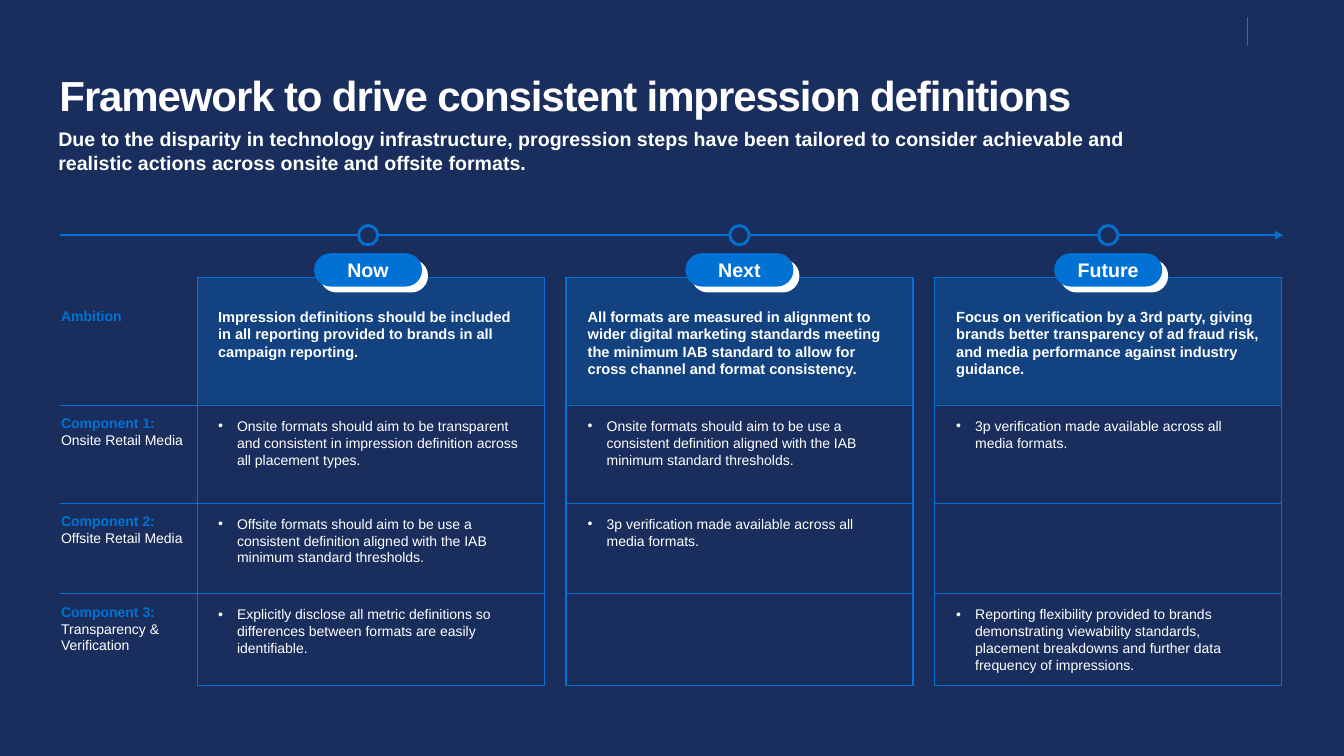
from dataclasses import dataclass

from lxml import etree
from pptx import Presentation
from pptx.dml.color import RGBColor
from pptx.enum import shapes, text
from pptx.oxml import ns
from pptx.util import Pt


@dataclass(frozen=True)
class Theme:
    font: str = "Arial"
    navy: str = "1A2E5D"
    blue: str = "0172D4"
    white: str = "FFFFFF"
    grey: str = "5B5F82"
    title: float = 30
    heading: float = 14
    ambition: float = 10.5
    body: float = 10


def add_xml(parent, tag, **attributes):
    return etree.SubElement(parent, ns.qn(tag), attributes)


class SlideBuilder:
    def __init__(self, slide, theme):
        self.slide = slide
        self.theme = theme
        slide.background.fill.solid()
        slide.background.fill.fore_color.rgb = RGBColor.from_string(theme.navy)

    def set_text(self, shape, lines, size, bold=False, color=None, align=text.PP_ALIGN.LEFT,
                 insets=(7.2, 3.6, 7.2, 3.6), anchor=text.MSO_ANCHOR.TOP, bullet=False):
        """Fill a shape with lines, each a string or a (string, bold, color) tuple."""
        frame = shape.text_frame
        frame.word_wrap = True
        frame.auto_size = text.MSO_AUTO_SIZE.NONE
        frame.vertical_anchor = anchor
        (frame.margin_left, frame.margin_top,
         frame.margin_right, frame.margin_bottom) = map(Pt, insets)
        for index, line in enumerate(lines):
            words, is_bold, ink = (line, bold, color) if isinstance(line, str) else line
            paragraph = frame.paragraphs[0] if index == 0 else frame.add_paragraph()
            paragraph.text = words
            paragraph.alignment = align
            paragraph.space_before = Pt(0)
            properties = paragraph._p.get_or_add_pPr()
            indent = Pt(13.6) if bullet else 0
            properties.set("marL", str(indent))
            properties.set("indent", str(-indent))
            if bullet:
                add_xml(properties, "a:buFont", typeface=self.theme.font)
                add_xml(properties, "a:buChar", char="•")
            else:
                add_xml(properties, "a:buNone")
            font = paragraph.font
            font.name, font.size, font.bold = self.theme.font, Pt(size), is_bold
            font.color.rgb = RGBColor.from_string(ink or self.theme.white)

    def placeholder(self, index, box, content, size, **style):
        shape = self.slide.placeholders[index]
        shape.left, shape.top, shape.width, shape.height = map(Pt, box)
        self.set_text(shape, [content], size, bold=True, **style)
        return shape.text_frame.paragraphs[0]

    def text_box(self, box, lines, size, **style):
        shape = self.slide.shapes.add_textbox(*map(Pt, box))
        self.set_text(shape, lines, size, insets=(14.4, 3.6, 14.4, 3.6), **style)

    def shape(self, kind, box, fill=None, line=None, line_width=1, alpha=None):
        shape = self.slide.shapes.add_shape(kind, *map(Pt, box))
        shape.shadow.inherit = False
        if fill:
            shape.fill.solid()
            shape.fill.fore_color.rgb = RGBColor.from_string(fill)
            if alpha:
                color = shape._element.spPr.find(".//" + ns.qn("a:srgbClr"))
                add_xml(color, "a:alpha", val=str(alpha * 1000))
        else:
            shape.fill.background()
        if line:
            shape.line.color.rgb = RGBColor.from_string(line)
            shape.line.width = Pt(line_width)
        else:
            shape.line.fill.background()
        return shape

    def line(self, start, end, color, width, arrow=False):
        connector = self.slide.shapes.add_connector(
            shapes.MSO_CONNECTOR.STRAIGHT, *map(Pt, (*start, *end)))
        connector.line.color.rgb = RGBColor.from_string(color)
        connector.line.width = Pt(width)
        properties = connector._element.spPr
        if arrow:
            add_xml(properties.find(ns.qn("a:ln")), "a:tailEnd", type="triangle")
        add_xml(properties, "a:effectLst")

    def pill(self, box, label):
        """Rounded label with a hard white shadow."""
        shape = self.shape(shapes.MSO_SHAPE.ROUNDED_RECTANGLE, box, self.theme.blue)
        shape.adjustments[0] = 0.5
        effects = shape._element.spPr.find(ns.qn("a:effectLst"))
        shadow = add_xml(effects, "a:outerShdw", blurRad="0", dist=str(Pt(6)),
                         dir="2700000", algn="tl", rotWithShape="0")
        add_xml(shadow, "a:srgbClr", val=self.theme.white)
        self.set_text(shape, [label], self.theme.heading, bold=True, insets=(7.2, 0, 7.2, 0),
                      align=text.PP_ALIGN.CENTER, anchor=text.MSO_ANCHOR.MIDDLE)


LEFT_EDGE = 43.2
COLUMN_LEFT, COLUMN_PITCH, COLUMN_WIDTH = 141.2, 263.2, 247.7
COLUMN_TOP, COLUMN_HEIGHT, AMBITION_HEIGHT = 198, 291.6, 90.7
AMBITION_TEXT_TOP = 216
TIMELINE = 168
ROW_LINES = (289.4, 359.3, 424.1)

COMPONENTS = ("Onsite Retail Media", "Offsite Retail Media", "Transparency & Verification")

# Stage name, marker centre, text left, ambition, one action per component
STAGES = (
    ("Now", 262.9, 141.4,
     "Impression definitions should be included in all reporting provided to brands in all "
     "campaign reporting.",
     ("Onsite formats should aim to be transparent and consistent in impression definition "
      "across all placement types.",
      "Offsite formats should aim to be use a consistent definition aligned with the IAB "
      "minimum standard thresholds.",
      "Explicitly disclose all metric definitions so differences between formats are easily "
      "identifiable.")),
    ("Next", 528.2, 405.4,
     "All formats are measured in alignment to wider digital marketing standards meeting the "
     "minimum IAB standard to allow for cross channel and format consistency.",
     ("Onsite formats should aim to be use a consistent definition aligned with the IAB "
      "minimum standard thresholds.",
      "3p verification made available across all media formats.",
      None)),
    ("Future", 791.6, 668.6,
     "Focus on verification by a 3rd party, giving brands better transparency of ad fraud "
     "risk, and media performance against industry guidance.",
     ("3p verification made available across all media formats.",
      None,
      "Reporting flexibility provided to brands demonstrating viewability standards, "
      "placement breakdowns and further data frequency of impressions.")),
)


def main():
    presentation = Presentation()
    presentation.slide_width, presentation.slide_height = Pt(960), Pt(540)
    theme = Theme()
    builder = SlideBuilder(
        presentation.slides.add_slide(presentation.slide_layouts[1]), theme)

    title = builder.placeholder(
        0, (0, 0, 919.4, 104.4), "Framework to drive consistent impression definitions",
        theme.title, insets=(42.5, 56.9, 7.2, 3.6))
    title.line_spacing = 0.8
    title.font._element.set("spc", "-80")
    builder.placeholder(
        1, (34.4, 87.1, 785.5, 53.3),
        "Due to the disparity in technology infrastructure, progression steps have been "
        "tailored to consider achievable and realistic actions across onsite and offsite "
        "formats.", theme.heading)

    builder.line((891.2, 12.2), (891.2, 32.6), theme.grey, 0.5)
    builder.line((LEFT_EDGE, TIMELINE), (916.6, TIMELINE), theme.blue, 1, arrow=True)

    builder.text_box((29.3, AMBITION_TEXT_TOP, 117.4, 19.4), [("Ambition", True, theme.blue)],
                     theme.body)
    for number, (component, row) in enumerate(zip(COMPONENTS, ROW_LINES), 1):
        builder.text_box((29.3, row + 3.3, 117.4, 44),
                         [(f"Component {number}:", True, theme.blue), component], theme.body)

    for index, (stage, centre, text_left, ambition, actions) in enumerate(STAGES):
        left = COLUMN_LEFT + index * COLUMN_PITCH
        builder.shape(shapes.MSO_SHAPE.RECTANGLE,
                      (left, COLUMN_TOP, COLUMN_WIDTH, AMBITION_HEIGHT), theme.blue, alpha=30)
        builder.shape(shapes.MSO_SHAPE.RECTANGLE,
                      (left, COLUMN_TOP, COLUMN_WIDTH, COLUMN_HEIGHT), line=theme.blue)
        builder.shape(shapes.MSO_SHAPE.OVAL, (centre - 6.9, TIMELINE - 6.9, 13.8, 13.8),
                      theme.navy, theme.blue, 2)
        builder.pill((centre - 38.6, 180.9, 77.2, 23.8), stage)
        builder.text_box((text_left, AMBITION_TEXT_TOP, COLUMN_WIDTH, 58.3), [ambition],
                         theme.ambition, bold=True)
        for row, action in zip(ROW_LINES, actions):
            line_left = LEFT_EDGE if index == 0 else left
            builder.line((line_left, row), (left + COLUMN_WIDTH, row), theme.blue, 0.5)
            if action:
                builder.text_box((text_left, row + 5.2, COLUMN_WIDTH, 55), [action],
                                 theme.body, bullet=True)

    presentation.save("out.pptx")


if __name__ == "__main__":
    main()
